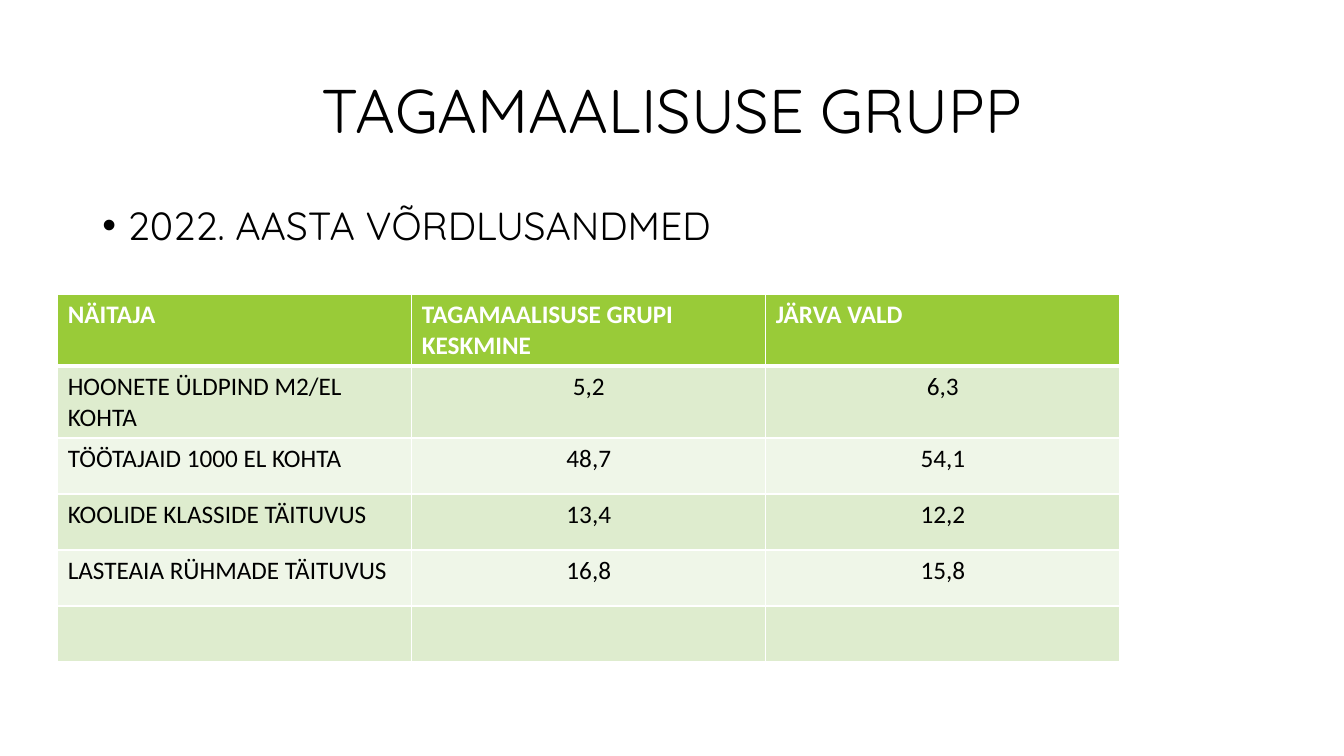
from dataclasses import dataclass

from lxml import etree
from pptx import Presentation
from pptx.dml.color import RGBColor
from pptx.enum.text import MSO_ANCHOR, MSO_AUTO_SIZE, PP_ALIGN
from pptx.oxml.ns import qn
from pptx.util import Pt

LEFT = PP_ALIGN.LEFT
CENTER = PP_ALIGN.CENTER
TOP = MSO_ANCHOR.TOP
MIDDLE = MSO_ANCHOR.MIDDLE
NO_AUTOFIT = MSO_AUTO_SIZE.NONE
TITLE_AND_CONTENT = 1


@dataclass(frozen=True)
class Theme:
    heading_font: str = "Quicksand"
    table_font: str = "Calibri"
    title_size: int = 44
    body_size: int = 28
    table_size: int = 18
    text: str = "000000"
    white: str = "FFFFFF"
    header: str = "99CB38"
    odd_row: str = "DEECCE"
    even_row: str = "EFF6E8"


THEME = Theme()

ROWS = [
    ("NÄITAJA", "TAGAMAALISUSE GRUPI KESKMINE", "JÄRVA VALD"),
    ("HOONETE ÜLDPIND M2/EL KOHTA", "5,2", "6,3"),
    ("TÖÖTAJAID 1000 EL KOHTA", "48,7", "54,1"),
    ("KOOLIDE KLASSIDE TÄITUVUS", "13,4", "12,2"),
    ("LASTEAIA RÜHMADE TÄITUVUS", "16,8", "15,8"),
    ("", "", ""),
]


def format_paragraph(paragraph, font_name, size, color, alignment, bold=False):
    paragraph.alignment = alignment
    for font in [paragraph.font] + [run.font for run in paragraph.runs]:
        font.name = font_name
        font.size = Pt(size)
        font.bold = bold
        font.color.rgb = RGBColor.from_string(color)


def fill_placeholder(shape, text, top, height, size, alignment, anchor):
    shape.left, shape.top = Pt(66), Pt(top)
    shape.width, shape.height = Pt(828), Pt(height)
    text_frame = shape.text_frame
    text_frame.text = text
    text_frame.word_wrap = True
    text_frame.auto_size = NO_AUTOFIT
    text_frame.vertical_anchor = anchor
    paragraph = text_frame.paragraphs[0]
    paragraph.line_spacing = 0.9
    paragraph.space_before = Pt(0)
    return paragraph, size, alignment


def add_title(slide, text):
    paragraph, size, alignment = fill_placeholder(
        slide.shapes.title, text, 28.75, 104.4, THEME.title_size, CENTER, MIDDLE)
    format_paragraph(paragraph, THEME.heading_font, size, THEME.text, alignment)


def add_bullet(slide, text):
    paragraph, size, alignment = fill_placeholder(
        slide.placeholders[1], text, 143.75, 342.6, THEME.body_size, LEFT, TOP)
    properties = paragraph._p.get_or_add_pPr()
    properties.set("marL", str(Pt(18)))
    properties.set("indent", str(Pt(-18)))
    etree.SubElement(properties, qn("a:buFont"), typeface="Arial")
    etree.SubElement(properties, qn("a:buChar"), char="•")
    format_paragraph(paragraph, THEME.heading_font, size, THEME.text, alignment)


def set_border(cell, side, width):
    properties = cell._tc.get_or_add_tcPr()
    line = etree.SubElement(properties, qn(f"a:ln{side}"), w=str(Pt(width)))
    fill = etree.SubElement(line, qn("a:solidFill"))
    etree.SubElement(fill, qn("a:srgbClr"), val=THEME.white)


def format_cell(cell, text, row, column):
    is_header = row == 0
    cell.text = text
    widths = {"L": 1, "R": 1, "T": 3 if row == 1 else 1, "B": 3 if is_header else 1}
    for side, width in widths.items():
        set_border(cell, side, width)
    band = THEME.odd_row if row % 2 else THEME.even_row
    cell.fill.solid()
    cell.fill.fore_color.rgb = RGBColor.from_string(THEME.header if is_header else band)
    format_paragraph(
        cell.text_frame.paragraphs[0],
        THEME.table_font,
        THEME.table_size,
        THEME.white if is_header else THEME.text,
        LEFT if is_header or column == 0 else CENTER,
        bold=is_header,
    )


def add_comparison_table(slide, rows):
    column_count = len(rows[0])
    frame = slide.shapes.add_table(
        len(rows), column_count, Pt(41.25), Pt(210.5), Pt(758.7), Pt(40 * len(rows)))
    table = frame.table
    for column in table.columns:
        column.width = Pt(252.9)
    for row, texts in enumerate(rows):
        table.rows[row].height = Pt(40)
        for column, text in enumerate(texts):
            format_cell(table.cell(row, column), text, row, column)


def main():
    presentation = Presentation()
    presentation.slide_width = Pt(960)
    presentation.slide_height = Pt(540)
    slide = presentation.slides.add_slide(presentation.slide_layouts[TITLE_AND_CONTENT])
    add_title(slide, "TAGAMAALISUSE GRUPP")
    add_bullet(slide, "2022. AASTA VÕRDLUSANDMED")
    add_comparison_table(slide, ROWS)
    presentation.save("out.pptx")


if __name__ == "__main__":
    main()
